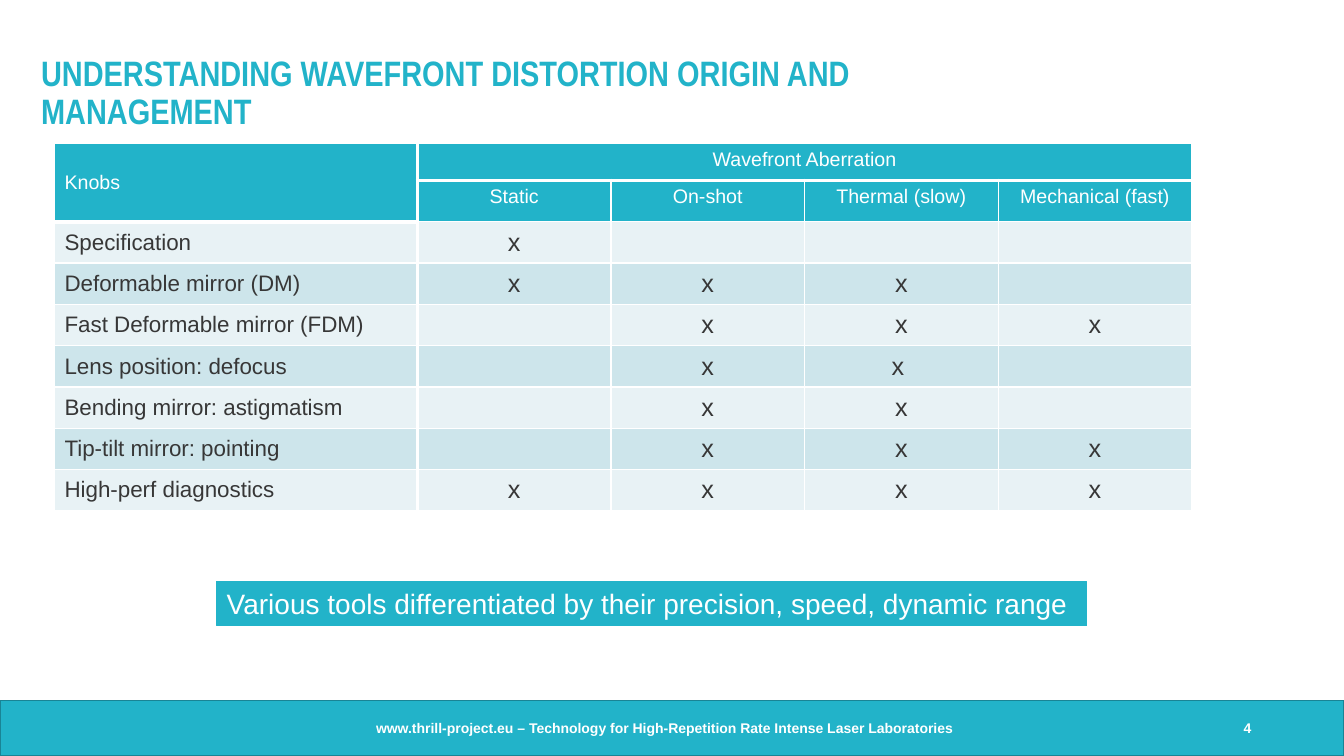
from dataclasses import dataclass

from lxml import etree
from pptx import Presentation
from pptx.dml.color import RGBColor
from pptx.enum import shapes, text
from pptx.oxml import ns
from pptx.util import Inches, Pt


@dataclass(frozen=True)
class Theme:
    teal: str = "22B3C9"
    edge: str = "198495"
    white: str = "FFFFFF"
    ink: str = "373737"
    bands: tuple = ("E8F2F5", "CDE5EB")
    font: str = "Arial"
    title_font: str = "Arial Narrow"
    title: float = 25.2
    banner: float = 20
    mark: float = 18
    label: float = 16
    header: float = 14
    footer: float = 10


LEFT, CENTER, RIGHT = text.PP_ALIGN.LEFT, text.PP_ALIGN.CENTER, text.PP_ALIGN.RIGHT
TOP, MIDDLE = text.MSO_ANCHOR.TOP, text.MSO_ANCHOR.MIDDLE
THIN, THICK = 1, 3

KNOBS = [
    ("Specification", ["x", "", "", ""]),
    ("Deformable mirror (DM)", ["x", "x", "x", ""]),
    ("Fast Deformable mirror (FDM)", ["", "x", "x", "x"]),
    ("Lens position: defocus", ["", "x", "x ", ""]),
    ("Bending mirror: astigmatism", ["", "x", "x", ""]),
    ("Tip-tilt mirror: pointing", ["", "x", "x", "x"]),
    ("High-perf diagnostics", ["x", "x", "x", "x"]),
]
ABERRATIONS = ["Static", "On-shot", "Thermal (slow)", "Mechanical (fast)"]


class SlideBuilder:
    def __init__(self, slide, theme):
        self.s = slide
        self.t = theme

    def set_text(self, tf, words, size, color, bold=False, align=LEFT, font=None):
        p = tf.paragraphs[0]
        p.text = words
        p.alignment = align
        p.font.name = font or self.t.font
        p.font.size = Pt(size)
        p.font.bold = bold
        p.font.color.rgb = RGBColor.from_string(color)
        return p

    def text_box(self, at, words, size, color, insets=(0.1, 0.1), **style):
        tf = self.s.shapes.add_textbox(*map(Inches, at)).text_frame
        tf.word_wrap = True
        tf.vertical_anchor = MIDDLE
        tf.margin_left, tf.margin_right = map(Inches, insets)
        return self.set_text(tf, words, size, color, **style)

    def bar(self, at, line, width):
        sp = self.s.shapes.add_shape(shapes.MSO_SHAPE.RECTANGLE, *map(Inches, at))
        sp.shadow.inherit = False
        sp.fill.solid()
        sp.fill.fore_color.rgb = RGBColor.from_string(self.t.teal)
        sp.line.color.rgb = RGBColor.from_string(line)
        sp.line.width = Pt(width)
        return sp

    def banner(self, at, words):
        tf = self.bar(at, self.t.teal, 0.75).text_frame
        tf.word_wrap = False
        tf.auto_size = text.MSO_AUTO_SIZE.SHAPE_TO_FIT_TEXT
        tf.vertical_anchor = TOP
        self.set_text(tf, words, self.t.banner, self.t.white)

    def table(self, at, widths, heights):
        size = sum(widths), sum(heights)
        frame = self.s.shapes.add_table(len(heights), len(widths), *map(Inches, at + size))
        tbl = frame.table
        tbl.first_row = tbl.horz_banding = False
        for col, width in zip(tbl.columns, widths):
            col.width = Inches(width)
        for row, height in zip(tbl.rows, heights):
            row.height = Inches(height)
        return tbl

    def cell(self, cell, words, size, color, fill, align=LEFT, anchor=MIDDLE, **borders):
        """Fill one cell; borders maps a side (L, R, T, B) to a width other than thin."""
        tc_pr = cell._tc.get_or_add_tcPr()
        for side in "LRTB":
            width = str(Pt(borders.get(side, THIN)))
            ln = etree.SubElement(tc_pr, ns.qn(f"a:ln{side}"), w=width)
            solid = etree.SubElement(ln, ns.qn("a:solidFill"))
            etree.SubElement(solid, ns.qn("a:srgbClr"), val=self.t.white)
        cell.fill.solid()
        cell.fill.fore_color.rgb = RGBColor.from_string(fill)
        cell.vertical_anchor = anchor
        self.set_text(cell.text_frame, words, size, color, align=align)

    def knob_table(self):
        t = self.t
        tbl = self.table((0.54, 1.42), [3.6] + [1.92] * 4, [0.37] + [0.41] * 8)
        head = dict(size=t.header, color=t.white, fill=t.teal)
        for r in range(2):
            self.cell(tbl.cell(r, 0), "" if r else "Knobs", R=THICK, B=THICK, **head)
        for c, name in enumerate(ABERRATIONS, 1):
            group = "Wavefront Aberration" if c == 1 else ""
            edge = {"L": THICK} if c == 1 else {}
            self.cell(tbl.cell(0, c), group, align=CENTER, anchor=TOP, B=THICK, **edge, **head)
            self.cell(tbl.cell(1, c), name, align=CENTER, anchor=TOP, **head)
        tbl.cell(0, 0).merge(tbl.cell(1, 0))
        tbl.cell(0, 1).merge(tbl.cell(0, 4))

        for r, (knob, marks) in enumerate(KNOBS):
            fill = t.bands[r % 2]
            self.cell(tbl.cell(r + 2, 0), knob, t.label, t.ink, fill, R=THICK)
            for c, mark in enumerate(marks, 1):
                edge = {"L": THICK} if c == 1 else {}
                self.cell(tbl.cell(r + 2, c), mark, t.mark, t.ink, fill, align=CENTER, **edge)


def main():
    prs = Presentation()
    prs.slide_width, prs.slide_height = Inches(13.33), Inches(7.5)
    t = Theme()
    b = SlideBuilder(prs.slides.add_slide(prs.slide_layouts[6]), t)

    b.bar((0, 6.95, 13.33, 0.55), t.edge, 1)
    b.text_box((3.73, 7.02, 5.87, 0.4),
               "www.thrill-project.eu – Technology for High-Repetition Rate Intense Laser Laboratories",
               t.footer, t.white, insets=(0, 0.1), bold=True)
    title = b.text_box((0.31, 0.5, 9.77, 0.86),
                       "UNDERSTANDING WAVEFRONT DISTORTION ORIGIN AND MANAGEMENT",
                       t.title, t.teal, bold=True, font=t.title_font)
    title.line_spacing = 0.9
    b.knob_table()
    b.text_box((11.86, 7.02, 0.55, 0.4), "4", t.footer, t.white,
               insets=(0.1, 0), bold=True, align=RIGHT)
    b.banner((2.15, 5.77, 8.63, 0.44),
             "Various tools differentiated by their precision, speed, dynamic range")
    prs.save("out.pptx")


if __name__ == "__main__":
    main()
